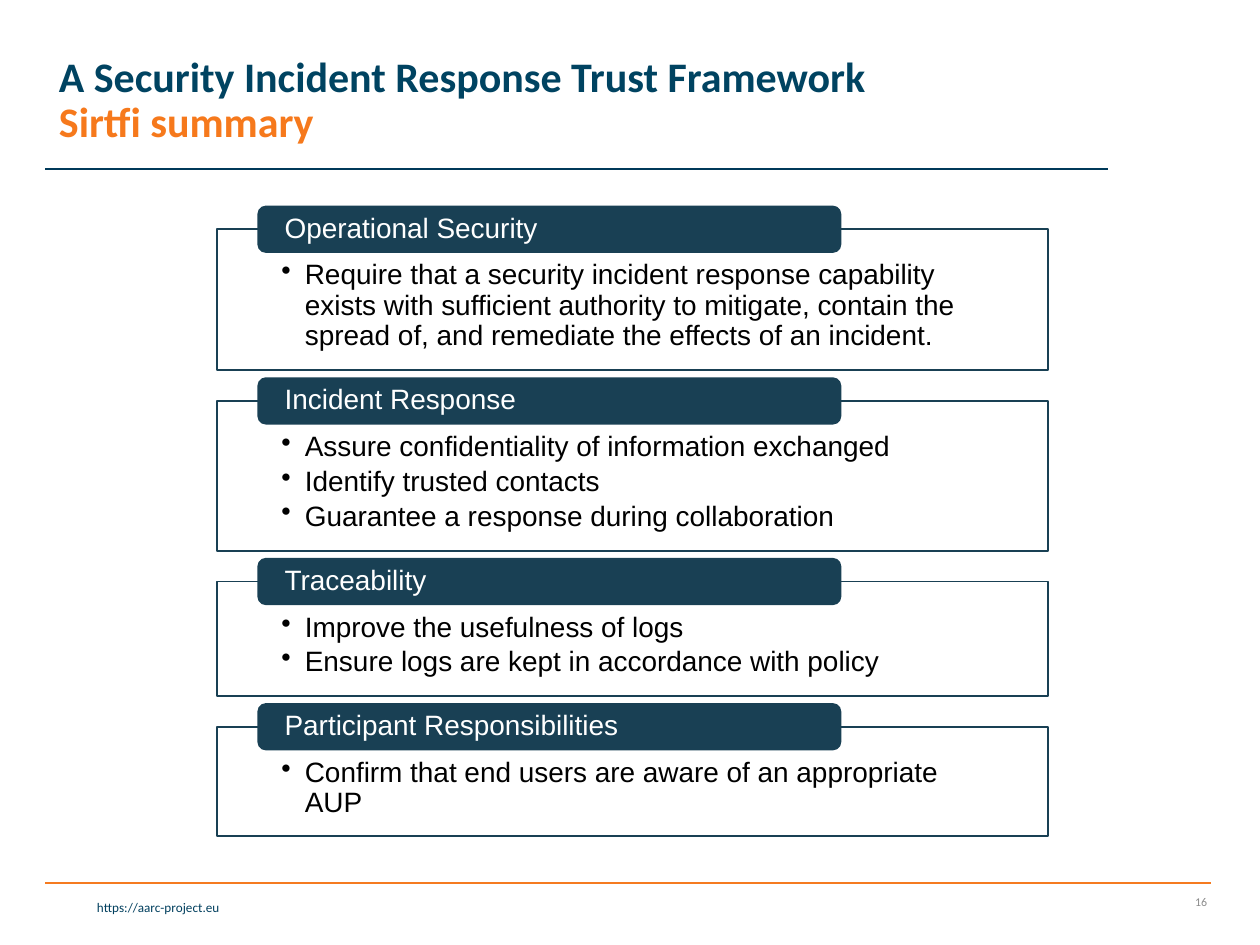
from lxml import etree
from pptx import Presentation
from pptx.dml.color import RGBColor
from pptx.enum import shapes, text
from pptx.oxml.ns import qn
from pptx.util import Pt

NAVY = "194054"
TITLE_BLUE = "004361"
ORANGE = "F57B20"

SECTIONS = [
    ("Operational Security", 80.6, [
        "Require that a security incident response capability exists with sufficient "
        "authority to mitigate, contain the spread of, and remediate the effects of an incident."]),
    ("Incident Response", 85.7, [
        "Assure confidentiality of information exchanged",
        "Identify trusted contacts",
        "Guarantee a response during collaboration"]),
    ("Traceability", 65.5, [
        "Improve the usefulness of logs",
        "Ensure logs are kept in accordance with policy"]),
    ("Participant Responsibilities", 62.6, [
        "Confirm that end users are aware of an appropriate AUP"]),
]


def rgb(value):
    """Turn a hex string into a colour."""
    return RGBColor.from_string(value)


def add_run(p, words, size, color, font="Calibri", bold=False):
    """Append a formatted run to a paragraph."""
    r = p.add_run()
    r.text = words
    r.font.size = Pt(size)
    r.font.name = font
    r.font.bold = bold
    r.font.color.rgb = rgb(color)


def set_frame(tf, insets=(7.2, 3.6, 7.2, 3.6), anchor=text.MSO_ANCHOR.TOP):
    """Set wrapping, insets and anchor of a text frame."""
    tf.word_wrap = True
    tf.vertical_anchor = anchor
    tf.margin_left, tf.margin_top, tf.margin_right, tf.margin_bottom = map(Pt, insets)


def add_rule(s, x1, x2, y, color):
    """Draw a thin horizontal rule."""
    line = s.shapes.add_connector(shapes.MSO_CONNECTOR.STRAIGHT, Pt(x1), Pt(y), Pt(x2), Pt(y))
    line.line.color.rgb = rgb(color)
    line.line.width = Pt(1)
    etree.SubElement(line._element.spPr, qn("a:effectLst"))


def add_box(s, kind, x, y, w, h, fill=None):
    """Draw a navy-outlined shape, filled if a colour is given."""
    sp = s.shapes.add_shape(kind, Pt(x), Pt(y), Pt(w), Pt(h))
    sp.shadow.inherit = False
    sp.line.color.rgb = rgb(NAVY)
    sp.line.width = Pt(1)
    if fill:
        sp.fill.solid()
        sp.fill.fore_color.rgb = rgb(fill)
    else:
        sp.fill.background()
    return sp


def add_bullet(p, words):
    """Fill a paragraph with one bulleted item."""
    pPr = p._p.get_or_add_pPr()
    pPr.set("marL", str(Pt(13.5)))
    pPr.set("indent", str(-Pt(13.5)))
    etree.SubElement(pPr, qn("a:buChar"), char="•")
    p.alignment = text.PP_ALIGN.LEFT
    p.line_spacing = 0.9
    p.space_after = Pt(2.6)
    add_run(p, words, 16, "000000", "Arial")


def add_section(s, x, y, w, h, heading, items):
    """Draw an outlined box of bullets with a heading tab on its top edge."""
    tf = add_box(s, shapes.MSO_SHAPE.RECTANGLE, x, y, w, h).text_frame
    set_frame(tf, (36.9, 18, 36.9, 8.6))
    for i, item in enumerate(items):
        add_bullet(tf.add_paragraph() if i else tf.paragraphs[0], item)
    tab = add_box(s, shapes.MSO_SHAPE.ROUNDED_RECTANGLE, x + 23.76, y - 13, w * 0.7, 26, NAVY)
    set_frame(tab.text_frame, (13.8, 0, 13.8, 0), text.MSO_ANCHOR.MIDDLE)
    p = tab.text_frame.paragraphs[0]
    p.alignment = text.PP_ALIGN.LEFT
    p.line_spacing = 0.9
    add_run(p, heading, 16, "FFFFFF", "Arial")


def add_sections(s, x, y, w, gap):
    """Stack the sections with equal gaps."""
    for heading, h, items in SECTIONS:
        add_section(s, x, y, w, h, heading, items)
        y += h + gap


def add_title(s, x, y, w, h):
    """Place the two-line title and the rule under it."""
    tf = s.shapes.add_textbox(Pt(x), Pt(y), Pt(w), Pt(h)).text_frame
    set_frame(tf, anchor=text.MSO_ANCHOR.MIDDLE)
    p = tf.paragraphs[0]
    p.line_spacing = 0.9
    add_run(p, "A Security Incident Response Trust Framework", 24, TITLE_BLUE, bold=True)
    p.add_line_break()
    add_run(p, "Sirtfi summary", 24, "F6791C", bold=True)
    add_rule(s, x - 0.7, x + w + 39, y + h - 13.7, "003959")


def add_note(s, x, y, w, h, words, size, color, anchor):
    """Place one right-aligned footer text."""
    tf = s.shapes.add_textbox(Pt(x), Pt(y), Pt(w), Pt(h)).text_frame
    set_frame(tf, anchor=anchor)
    p = tf.paragraphs[0]
    p.alignment = text.PP_ALIGN.RIGHT
    add_run(p, words, size, color)


def add_footer(s, x, y, w):
    """Place the footer rule, web address and slide number."""
    add_rule(s, x, x + w, y, ORANGE)
    add_note(s, x - 0.7, y + 5.8, 107.3, 16.6, "https://aarc-project.eu", 7.5, "003F5E",
             text.MSO_ANCHOR.TOP)
    add_note(s, x + w - 38.9, y, 43.9, 21.6, "16", 6.8, "8C8C8C", text.MSO_ANCHOR.MIDDLE)


def main():
    """Build and save the slide."""
    prs = Presentation()
    prs.slide_width, prs.slide_height = Pt(720), Pt(540)
    s = prs.slides.add_slide(prs.slide_layouts[6])
    add_footer(s, 25.9, 504.7, 666)
    add_title(s, 26.6, 5.8, 567.4, 104.4)
    add_sections(s, 123.84, 131, 475.2, 17.5)
    prs.save("out.pptx")


if __name__ == "__main__":
    main()
